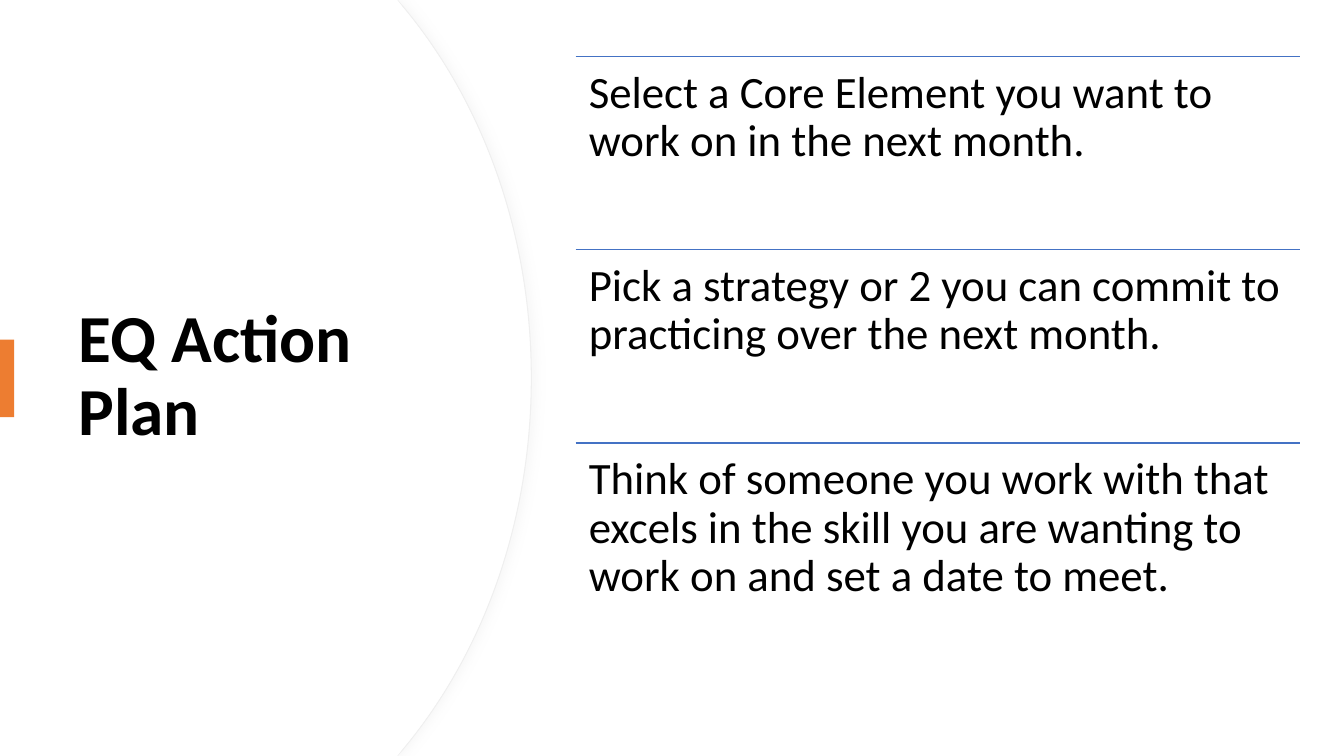
"""Build the EQ Action Plan slide."""
from dataclasses import dataclass

from lxml import etree
from pptx import Presentation
from pptx import util as u
from pptx.dml.color import RGBColor
from pptx.enum import shapes, text
from pptx.oxml import parse_xml
from pptx.oxml.ns import nsdecls, qn

WHITE = RGBColor(0xFF, 0xFF, 0xFF)
BLACK = RGBColor(0, 0, 0)
EDGE_GRAY = RGBColor(0xEF, 0xEF, 0xEF)
ORANGE = RGBColor(0xED, 0x7D, 0x31)
BLUE = RGBColor(0x44, 0x72, 0xC4)
FONT = "Calibri"
SLIDE_WIDTH, SLIDE_HEIGHT = 13.33, 7.5
STEP_LEFT, STEP_WIDTH, STEP_INSET = 5.71, 7.18, 0.13
STEP_TOP, STEPS_SPAN = 0.56, 5.75
SHADOW = (
    f'<a:effectLst {nsdecls("a")}><a:outerShdw blurRad="88900" dist="38100" dir="0" '
    'algn="l" rotWithShape="0"><a:srgbClr val="D9D9D9"><a:alpha val="20000"/>'
    "</a:srgbClr></a:outerShdw></a:effectLst>"
)


@dataclass(frozen=True)
class Step:
    wording: str
    height: float


STEPS = [
    Step("Select a Core Element you want to work on in the next month.", 1.92),
    Step("Pick a strategy or 2 you can commit to practicing over the next month.", 1.92),
    Step("Think of someone you work with that excels in the skill you are wanting to "
         "work on and set a date to meet.", 2.54),
]


def curve_segments(shape, first: int, count: int) -> None:
    """Turn each three line segments, starting at first, into one cubic curve."""
    lines = list(shape._element.iter(qn("a:lnTo")))
    for start in range(first, first + 3 * count, 3):
        group = lines[start:start + 3]
        curve = etree.Element(qn("a:cubicBezTo"))
        group[0].addprevious(curve)
        for line in group:
            curve.append(line[0])
            line.getparent().remove(line)


def add_panel(slide, reach: float, edged: bool) -> None:
    """Draw the white panel whose right side bulges out to reach."""
    middle = SLIDE_HEIGHT / 2
    upper = [(3.94, 0), (reach - 1.26, 0.08), (reach - 0.48, 1.02), (reach, 2.32)]
    lower = [(x, SLIDE_HEIGHT - y) for x, y in reversed(upper)]
    outline = [*upper, (reach, middle), *lower, (0, SLIDE_HEIGHT)]
    builder = slide.shapes.build_freeform(0, 0)
    builder.add_line_segments([(u.Inches(x), u.Inches(y)) for x, y in outline], close=True)
    shape = builder.convert_to_shape()
    curve_segments(shape, first=2, count=2)
    shape.fill.solid()
    shape.fill.fore_color.rgb = WHITE
    if edged:
        shape.line.color.rgb = EDGE_GRAY
        shape.line.width = u.Pt(0.75)
        shape._element.spPr.append(parse_xml(SHADOW))
    else:
        shape.line.fill.background()
        shape.shadow.inherit = False


def add_text(slide, wording: str, left: float, top: float, width: float, height: float,
             size: int, bold: bool = False, inset: float | None = None,
             anchor: text.MSO_ANCHOR = text.MSO_ANCHOR.TOP) -> None:
    """Place one wrapped paragraph of black text."""
    box = slide.shapes.add_textbox(*map(u.Inches, (left, top, width, height)))
    frame = box.text_frame
    frame.word_wrap = True
    frame.vertical_anchor = anchor
    if inset is not None:
        frame.margin_left = frame.margin_right = u.Inches(inset)
        frame.margin_top = frame.margin_bottom = u.Inches(inset)
    frame.text = wording
    paragraph = frame.paragraphs[0]
    paragraph.line_spacing = 0.9
    font = paragraph.runs[0].font
    font.name, font.size, font.bold = FONT, u.Pt(size), bold
    font.color.rgb = BLACK


def add_rule(slide, top: float) -> None:
    """Draw the thin blue line above a step."""
    rule = slide.shapes.add_connector(
        shapes.MSO_CONNECTOR.STRAIGHT, u.Inches(STEP_LEFT), u.Inches(top),
        u.Inches(STEP_LEFT + STEP_WIDTH), u.Inches(top))
    rule.line.color.rgb = BLUE
    rule.line.width = u.Pt(1)
    etree.SubElement(rule._element.spPr, qn("a:effectLst"))


def add_accent(slide) -> None:
    """Draw the orange tab on the left edge."""
    accent = slide.shapes.add_shape(
        shapes.MSO_SHAPE.RECTANGLE, 0, u.Inches(3.37), u.Inches(0.14), u.Inches(0.77))
    accent.fill.solid()
    accent.fill.fore_color.rgb = ORANGE
    accent.line.fill.background()
    accent.shadow.inherit = False


def main() -> None:
    """Assemble and save the slide."""
    presentation = Presentation()
    presentation.slide_width = u.Inches(SLIDE_WIDTH)
    presentation.slide_height = u.Inches(SLIDE_HEIGHT)
    slide = presentation.slides.add_slide(presentation.slide_layouts[6])
    add_panel(slide, 5.27, edged=True)
    add_panel(slide, 5.26, edged=False)
    add_text(slide, "EQ Action Plan", 0.68, 1.27, 3.94, 4.95, 48, bold=True,
             anchor=text.MSO_ANCHOR.MIDDLE)
    add_accent(slide)
    for index, step in enumerate(STEPS):
        top = STEP_TOP + index * STEPS_SPAN / len(STEPS)
        add_rule(slide, top)
        add_text(slide, step.wording, STEP_LEFT, top, STEP_WIDTH, step.height, 32,
                 inset=STEP_INSET)
    presentation.save("out.pptx")


if __name__ == "__main__":
    main()
